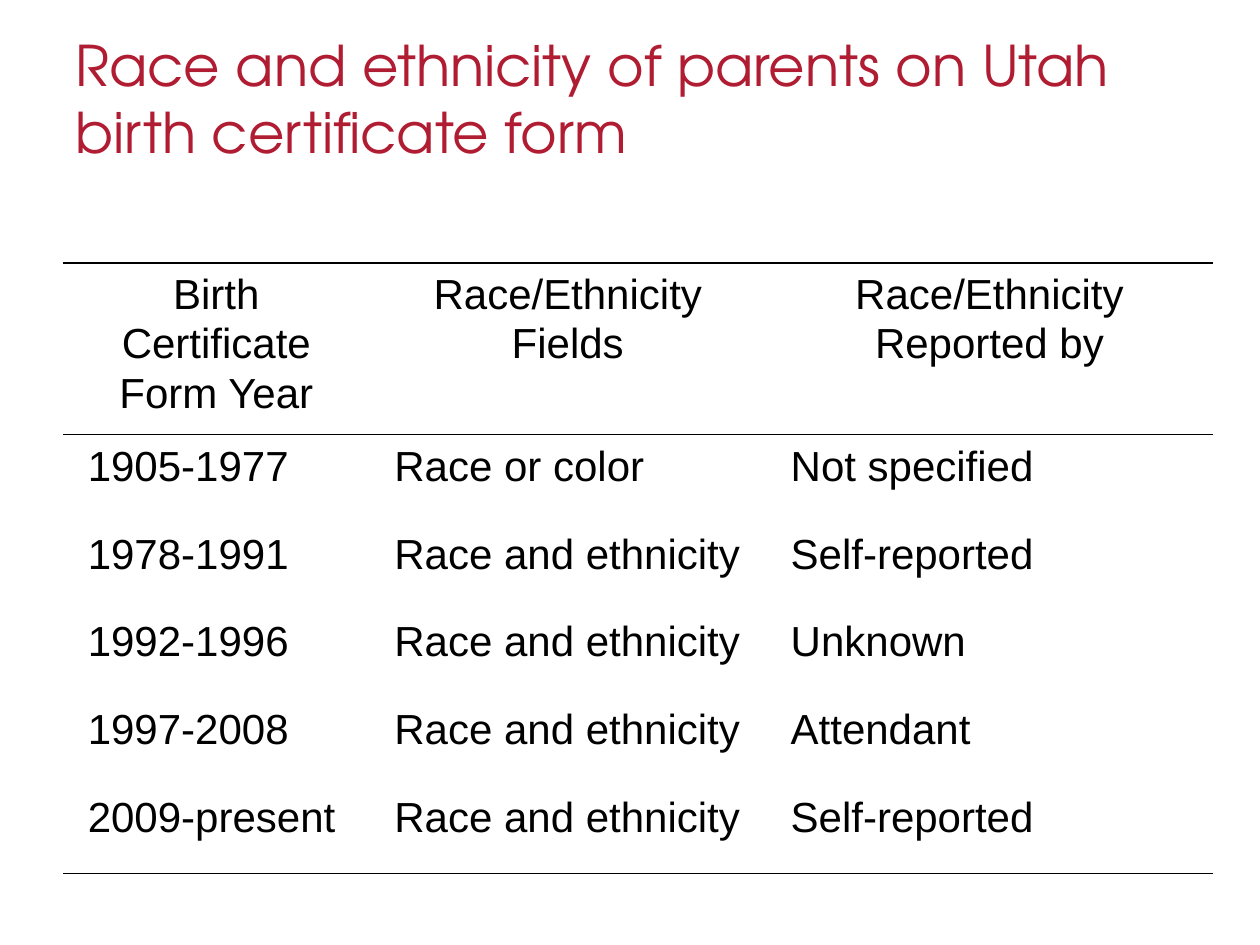
from lxml import etree
from pptx import Presentation
from pptx.dml.color import RGBColor
from pptx.enum.text import MSO_ANCHOR, PP_ALIGN
from pptx.oxml.ns import qn
from pptx.util import Cm, Pt

LEFT, CENTER = PP_ALIGN.LEFT, PP_ALIGN.CENTER
TOP = MSO_ANCHOR.TOP
BLACK, CRIMSON = "000000", "B01C32"

HEADINGS = ("Birth Certificate Form Year", "Race/Ethnicity Fields", "Race/Ethnicity Reported by")
FORMS = (
    ("1905-1977", "Race or color", "Not specified"),
    ("1978-1991", "Race and ethnicity", "Self-reported"),
    ("1992-1996", "Race and ethnicity", "Unknown"),
    ("1997-2008", "Race and ethnicity", "Attendant"),
    ("2009-present", "Race and ethnicity", "Self-reported"),
)
COLUMN_WIDTHS = (6.18, 7.99, 9.01)
ROW_HEIGHT, HEADING_HEIGHT = 1.77, 3.36
EDGES = ("lnL", "lnR", "lnT", "lnB")
RULED_EDGES = {0: ("lnB",), 1: ("lnT", "lnB"), 2: ("lnT",), 6: ("lnB",)}


def color(hex_code):
    return RGBColor.from_string(hex_code)


def write(frame, text, *, font="Arial", size=24, fill=BLACK, align=LEFT, spacing=1.0):
    frame.word_wrap = True
    paragraph = frame.paragraphs[0]
    paragraph.alignment = align
    paragraph.line_spacing = spacing
    run = paragraph.add_run()
    run.text = text
    run.font.name = font
    run.font.size = Pt(size)
    run.font.bold = False
    run.font.color.rgb = color(fill)


def rule_cell(cell, ruled):
    properties = cell._tc.get_or_add_tcPr()
    for edge in EDGES:
        line = etree.SubElement(properties, qn(f"a:{edge}"))
        if edge in ruled:
            line.set("w", str(Pt(1)))
            paint = etree.SubElement(line, qn("a:solidFill"))
            etree.SubElement(paint, qn("a:srgbClr"), val=BLACK)
        else:
            line.set("w", "0")
            etree.SubElement(line, qn("a:noFill"))
    cell.fill.background()


def add_title(slide):
    title = slide.shapes.add_textbox(Cm(1.27), Cm(0.49), Cm(22.86), Cm(3.68))
    title.text_frame.vertical_anchor = TOP
    write(title.text_frame, "Race and ethnicity of parents on Utah birth certificate form",
          font="TeX Gyre Adventor", size=32, fill=CRIMSON)


def fill_cell(cell, text, align):
    cell.margin_left = cell.margin_right = Cm(0.5)
    cell.margin_top = cell.margin_bottom = Cm(0.13)
    write(cell.text_frame, text, align=align, spacing=1.05)


def add_form_table(slide):
    heights = [ROW_HEIGHT, HEADING_HEIGHT] + [ROW_HEIGHT] * len(FORMS)
    table = slide.shapes.add_table(
        len(heights), len(COLUMN_WIDTHS), Cm(1.27), Cm(3.53),
        Cm(sum(COLUMN_WIDTHS)), Cm(sum(heights))).table
    table.first_row = table.horz_banding = False
    for column, width in zip(table.columns, COLUMN_WIDTHS):
        column.width = Cm(width)
    for index, (row, height) in enumerate(zip(table.rows, heights)):
        row.height = Cm(height)
        for cell in row.cells:
            rule_cell(cell, RULED_EDGES.get(index, ()))
    table.cell(0, 0).merge(table.cell(0, len(COLUMN_WIDTHS) - 1))
    for row_index, entries in enumerate((HEADINGS, *FORMS), start=1):
        align = CENTER if entries is HEADINGS else LEFT
        for column_index, entry in enumerate(entries):
            fill_cell(table.cell(row_index, column_index), entry, align)


def main():
    presentation = Presentation()
    presentation.slide_width, presentation.slide_height = Cm(25.4), Cm(19.05)
    slide = presentation.slides.add_slide(presentation.slide_layouts[6])
    add_title(slide)
    add_form_table(slide)
    presentation.save("out.pptx")


if __name__ == "__main__":
    main()
